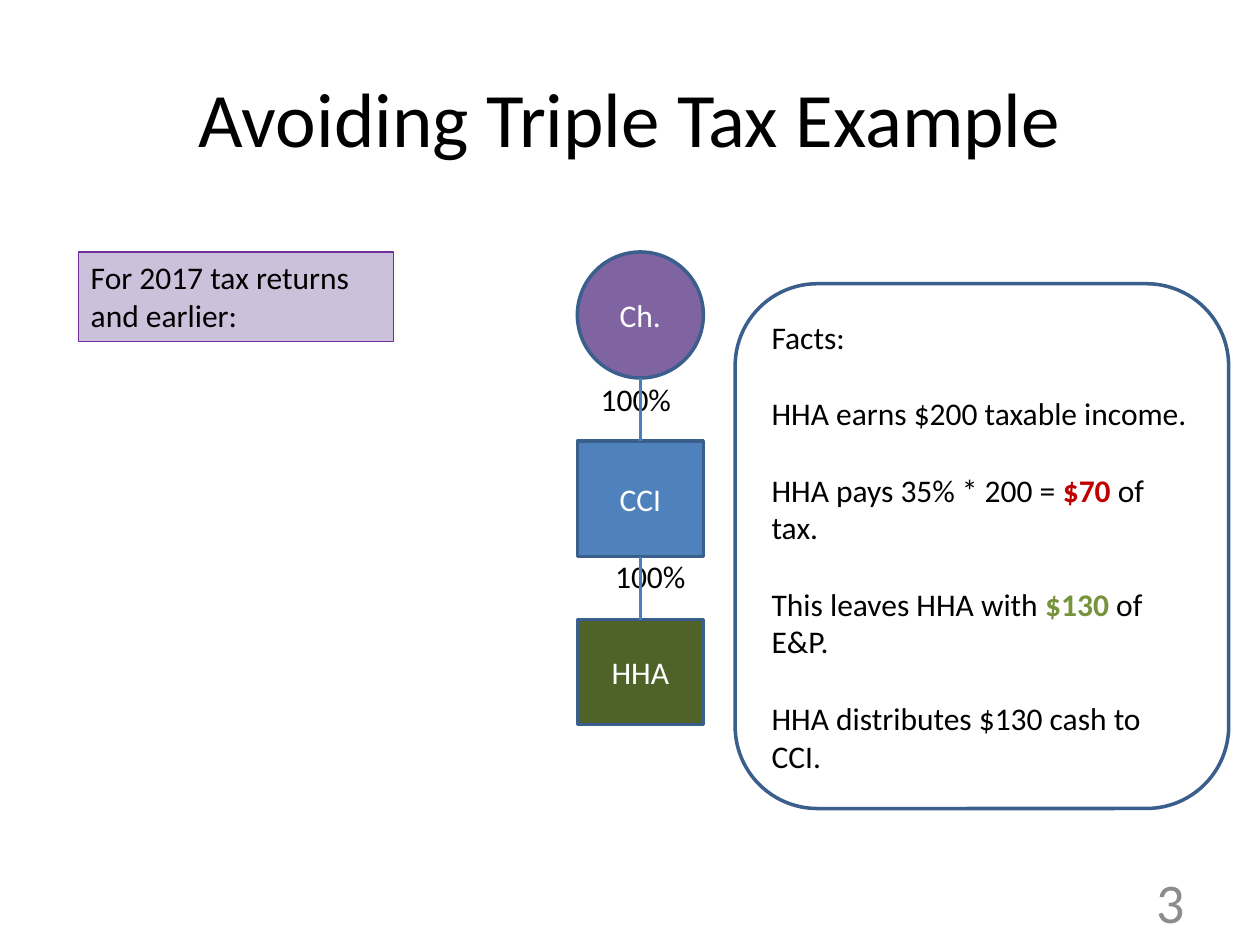
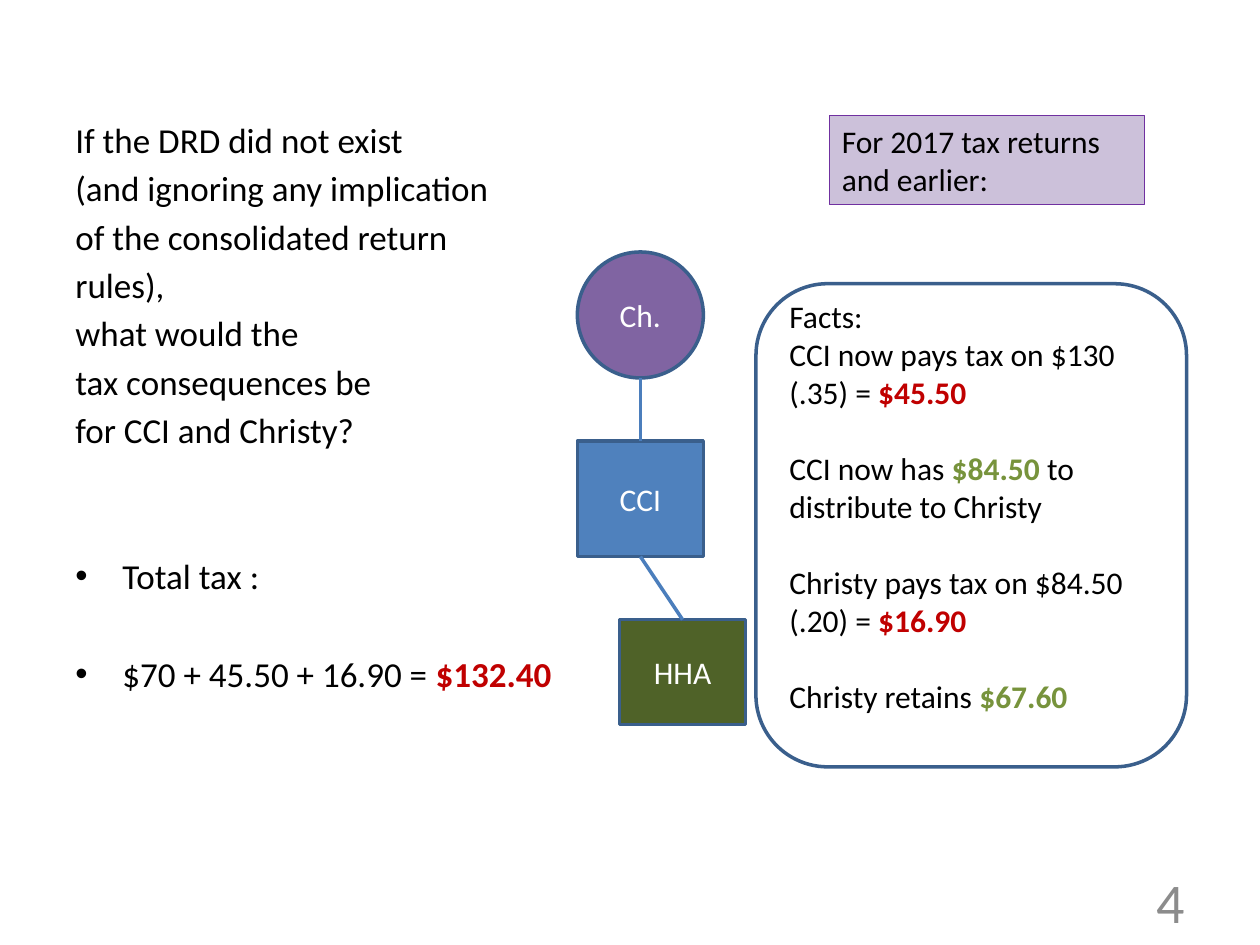
from dataclasses import dataclass

from lxml import etree
from pptx import Presentation
from pptx.dml.color import RGBColor
from pptx.enum.shapes import MSO_CONNECTOR, MSO_SHAPE
from pptx.enum.text import MSO_ANCHOR, PP_ALIGN
from pptx.oxml.ns import qn
from pptx.util import Cm, Pt

STRAIGHT = MSO_CONNECTOR.STRAIGHT
ELLIPSE = MSO_SHAPE.OVAL
RECTANGLE = MSO_SHAPE.RECTANGLE
ROUNDED = MSO_SHAPE.ROUNDED_RECTANGLE
TOP, MIDDLE = MSO_ANCHOR.TOP, MSO_ANCHOR.MIDDLE
LEFT, CENTER, RIGHT = PP_ALIGN.LEFT, PP_ALIGN.CENTER, PP_ALIGN.RIGHT

FONT = "Calibri"
COLORS = {
    "black": "000000",
    "white": "FFFFFF",
    "person": "8064A2",
    "parent": "4F81BD",
    "subsidiary": "4F6228",
    "outline": "3A5F8C",
    "link": "4B7EBC",
    "tax": "C00000",
    "kept": "77933C",
    "note": "CCC1DA",
    "note_line": "7030A0",
    "number": "8C8C8C",
}
BLANK_LINE = 22  # height in points of one skipped 18-point line
BULLET_INDENT = 0.95
CHART_LEFT, CHART_TOP, CHART_GAP = 11.64, 5.08, 1.27
NODE_WIDTH = 2.54
INSETS = (0.25, 0.13, 0.25, 0.13)


@dataclass(frozen=True)
class Place:
    """Left, top, width and height in centimetres."""
    left: float
    top: float
    width: float
    height: float

    def lengths(self) -> tuple:
        return Cm(self.left), Cm(self.top), Cm(self.width), Cm(self.height)


@dataclass(frozen=True)
class Span:
    text: str
    color: str = "black"
    bold: bool = False


@dataclass(frozen=True)
class Line:
    spans: tuple
    before: float = 0
    bullet: bool = False


@dataclass(frozen=True)
class Entity:
    name: str
    shape: int
    fill: str
    height: float


ENTITIES = (
    Entity("Ch.", ELLIPSE, "person", 2.54),
    Entity("CCI", RECTANGLE, "parent", 2.33),
    Entity("HHA", RECTANGLE, "subsidiary", 2.12),
)


def rgb(name: str) -> RGBColor:
    return RGBColor.from_string(COLORS[name])


def line(*parts, before: float = 0, bullet: bool = False) -> Line:
    """Make a line from plain strings and Spans."""
    spans = tuple(Span(part) if isinstance(part, str) else part for part in parts)
    return Line(spans, before, bullet)


def tax(text: str) -> Span:
    return Span(text, "tax", True)


def kept(text: str) -> Span:
    return Span(text, "kept", True)


def add_bullet(para) -> None:
    properties = para._p.get_or_add_pPr()
    properties.set("marL", str(Cm(BULLET_INDENT)))
    properties.set("indent", str(-Cm(BULLET_INDENT)))
    etree.SubElement(properties, qn("a:buFont")).set("typeface", "Arial")
    etree.SubElement(properties, qn("a:buChar")).set("char", "•")


def write(frame, lines, *, size: float = 18, align=LEFT, anchor=TOP, insets=INSETS) -> None:
    frame.word_wrap = True
    frame.vertical_anchor = anchor
    frame.margin_left, frame.margin_top, frame.margin_right, frame.margin_bottom = map(Cm, insets)
    for index, item in enumerate(lines):
        para = frame.add_paragraph() if index else frame.paragraphs[0]
        para.alignment = align
        para.space_before = Pt(item.before)
        if item.bullet:
            add_bullet(para)
        for part in item.spans:
            span = para.add_run()
            span.text = part.text
            span.font.name = FONT
            span.font.size = Pt(size)
            span.font.bold = part.bold
            span.font.color.rgb = rgb(part.color)


def add_text(page, place: Place, lines, **text_format) -> None:
    box = page.shapes.add_textbox(*place.lengths())
    write(box.text_frame, lines, **text_format)


def add_box(page, shape: int, place: Place, lines, *, fill: str, outline: str = "outline",
            weight: float = 2, **text_format):
    box = page.shapes.add_shape(shape, *place.lengths())
    box.shadow.inherit = False
    box.fill.solid()
    box.fill.fore_color.rgb = rgb(fill)
    box.line.color.rgb = rgb(outline)
    box.line.width = Pt(weight)
    write(box.text_frame, lines, **text_format)
    return box


def add_link(page, upper, lower) -> None:
    """Join the bottom of one box to the top of the next."""
    link = page.shapes.add_connector(
        STRAIGHT, upper.left + upper.width // 2, upper.top + upper.height,
        lower.left + lower.width // 2, lower.top)
    # Sites of an ellipse are numbered differently, so only rectangles are joined.
    if upper.auto_shape_type == RECTANGLE:
        link.begin_connect(upper, 2)
    link.end_connect(lower, 0)
    link.line.color.rgb = rgb("link")
    link.line.width = Pt(2)
    etree.SubElement(link._element.spPr, qn("a:effectLst"))


def add_ownership_chart(page, subsidiary_left: float = CHART_LEFT) -> None:
    lefts = (CHART_LEFT, CHART_LEFT, subsidiary_left)
    top = CHART_TOP
    boxes = []
    for entity, left in zip(ENTITIES, lefts):
        place = Place(left, top, NODE_WIDTH, entity.height)
        boxes.append(add_box(page, entity.shape, place, [line(Span(entity.name, "white"))],
                             fill=entity.fill, align=CENTER, anchor=MIDDLE))
        top += entity.height + CHART_GAP
    for upper, lower in zip(boxes, boxes[1:]):
        add_link(page, upper, lower)


def add_facts(page, place: Place, lines, bottom_inset: float = 0.13) -> None:
    add_box(page, ROUNDED, place, lines, fill="white", anchor=MIDDLE,
            insets=(*INSETS[:3], bottom_inset))


def add_year_note(page, left: float, top: float) -> None:
    add_box(page, RECTANGLE, Place(left, top, 6.35, 1.8),
            [line("For 2017 tax returns and earlier:")],
            fill="note", outline="note_line", weight=0.75)


def add_page_number(page, number: int) -> None:
    add_text(page, Place(18.2, 17.65, 5.93, 1.02), [line(Span(str(number), "number"))],
             size=32, align=RIGHT, anchor=MIDDLE)


def build_example(deck) -> None:
    page = deck.slides.add_slide(deck.slide_layouts[5])
    title = page.shapes.title
    title.left, title.top, title.width, title.height = Place(1.27, 0.76, 22.86, 3.18).lengths()
    write(title.text_frame, [line("Avoiding Triple Tax Example")],
          size=44, align=CENTER, anchor=MIDDLE)

    # Ownership shares lie behind the links
    for left, top in ((12.11, 7.67), (12.4, 11.22)):
        add_text(page, Place(left, top, 1.8, 0.78), [line("100%")], insets=(0, 0, 0, 0))
    add_ownership_chart(page)

    add_facts(page, Place(14.82, 5.72, 9.95, 10.58), [
        line("Facts:"),
        line("HHA earns $200 taxable income.", before=BLANK_LINE),
        line("HHA pays 35% * 200 = ", tax("$70 "), "of tax.", before=BLANK_LINE),
        line("This leaves HHA with ", kept("$130 "), "of E&P.", before=BLANK_LINE),
        line("HHA distributes $130 cash to CCI.", before=BLANK_LINE),
    ])
    add_year_note(page, 1.58, 5.08)
    add_page_number(page, 3)


def build_question(deck) -> None:
    page = deck.slides.add_slide(deck.slide_layouts[6])

    # Question and total
    question = (
        "If the DRD did not exist",
        "(and ignoring any implication",
        "of the consolidated return",
        "rules),",
        "what would the",
        "tax consequences be",
        "for CCI and Christy?",
    )
    gap, pitch = 3.6, 28
    lines = [line(text, before=gap if index else 0) for index, text in enumerate(question)]
    lines += [
        line("Total tax :", before=gap + 2 * pitch, bullet=True),
        line("$70 + 45.50 + 16.90 = ", tax("$132.40"), before=gap + pitch, bullet=True),
    ]
    add_text(page, Place(1.27, 2.26, 10.2, 12.2), lines, size=20)

    add_ownership_chart(page, subsidiary_left=12.49)
    add_facts(page, Place(15.24, 5.72, 8.68, 9.74), [
        line("Facts:"),
        line("CCI now pays tax on $130 (.35) = ", tax("$45.50")),
        line("CCI now has ", kept("$84.50 "), "to distribute to Christy", before=BLANK_LINE),
        line("Christy pays tax on $84.50 (.20) = ", tax("$16.90"), before=BLANK_LINE),
        line("Christy retains ", kept("$67.60"), before=BLANK_LINE),
    ], bottom_inset=0.9)
    add_year_note(page, 16.72, 2.33)
    add_page_number(page, 4)


def main() -> None:
    deck = Presentation()
    deck.slide_width, deck.slide_height = Cm(25.4), Cm(19.05)
    build_example(deck)
    build_question(deck)
    deck.save("out.pptx")


if __name__ == "__main__":
    main()
